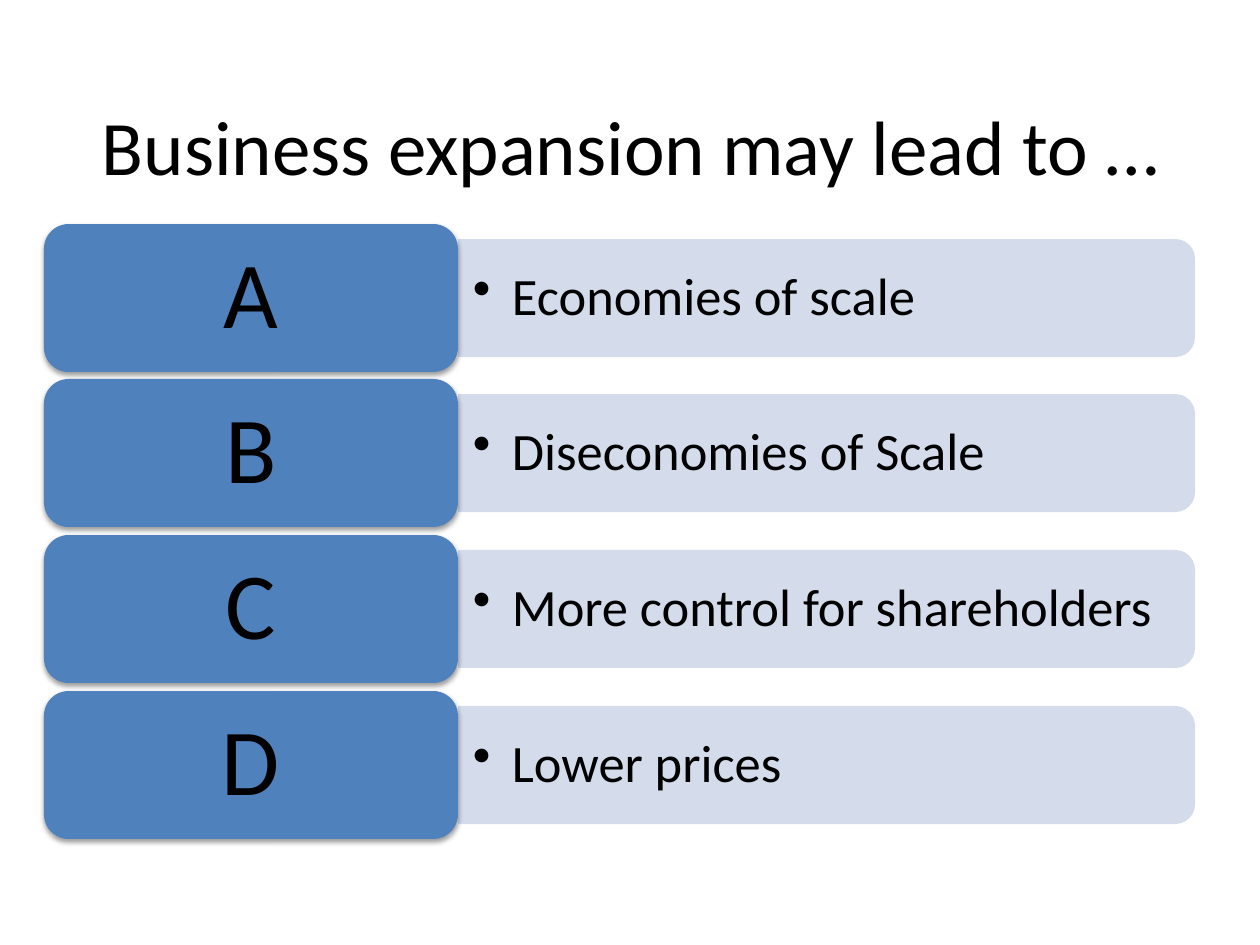
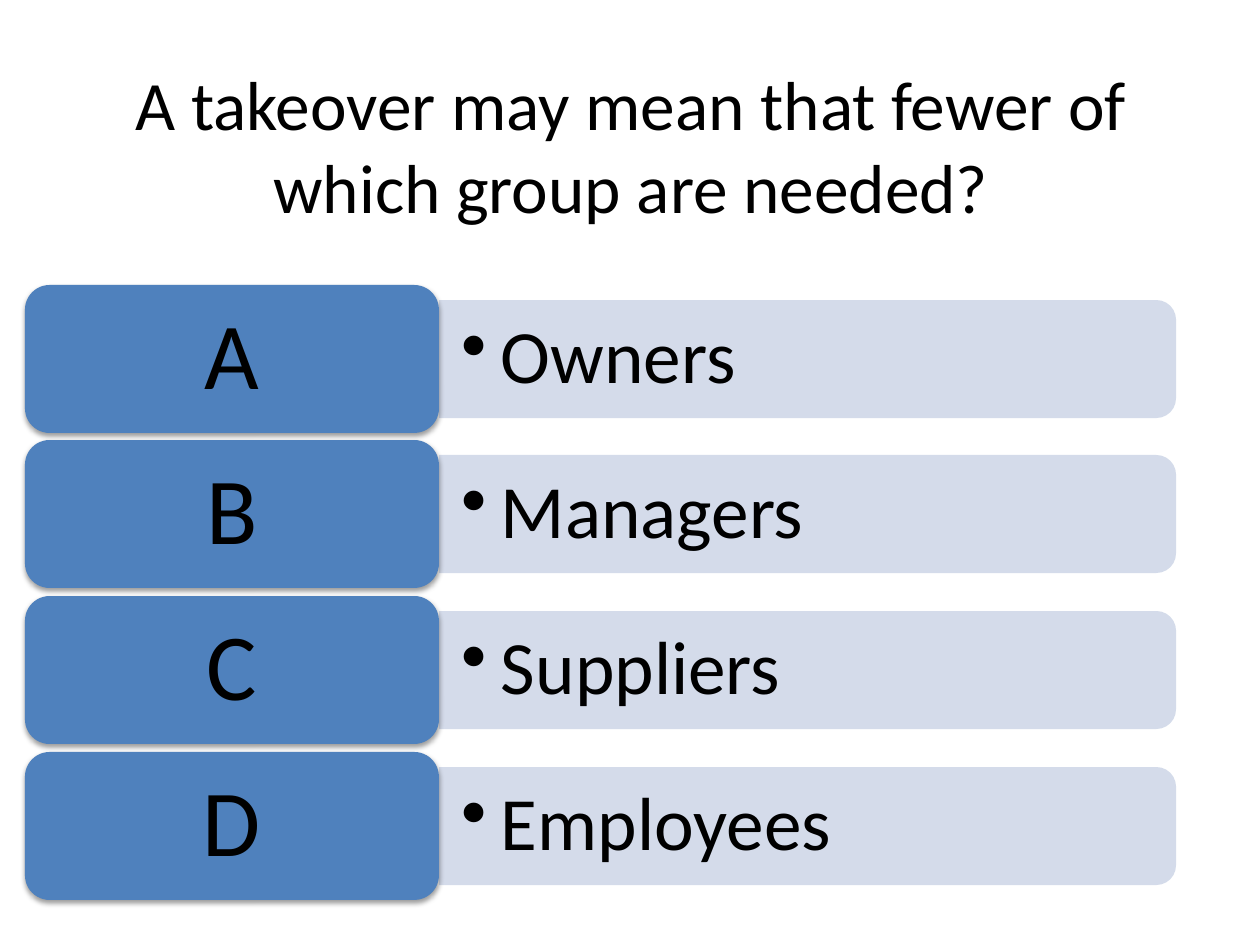
"""Build two multiple-choice slides about business growth."""
from lxml import etree
from pptx import Presentation
from pptx.dml.color import RGBColor
from pptx.enum.shapes import MSO_SHAPE
from pptx.enum.text import MSO_ANCHOR, PP_ALIGN
from pptx.oxml.ns import qn
from pptx.util import Pt

PX = 914400 / 126
MIDDLE = MSO_ANCHOR.MIDDLE
CENTER, LEFT = PP_ALIGN.CENTER, PP_ALIGN.LEFT
TILE, BAR = MSO_SHAPE.ROUNDED_RECTANGLE, MSO_SHAPE.ROUND_2_SAME_RECTANGLE
BLACK, BLUE, PALE = "000000", "4F81BD", "D0D8E8"
FONT = "Calibri"
TILE_W, TILE_H = 414, 148
BAR_W, BAR_H = 737, 118
INDENT = 39

QUESTIONS = [
    dict(title="Business expansion may lead to …", title_size=44, left=44, top=224,
         size=30, inset=(15, 7),
         answers=["Economies of scale", "Diseconomies of Scale",
                  "More control for shareholders", "Lower prices"]),
    dict(title="A takeover may mean that fewer of which group are needed?",
         title_size=39.6, left=25, top=285, size=43, inset=(23, 11),
         answers=["Owners", "Managers", "Suppliers", "Employees"]),
]


def add_shape(s, kind, box, color):
    sp = s.shapes.add_shape(kind, *[round(v * PX) for v in box])
    sp.shadow.inherit = False
    sp.fill.solid()
    sp.fill.fore_color.rgb = RGBColor.from_string(color)
    sp.line.fill.background()
    return sp


def add_text(s, box, text, size, inset, align, after=None):
    tf = s.shapes.add_textbox(*[round(v * PX) for v in box]).text_frame
    tf.word_wrap = True
    tf.vertical_anchor = MIDDLE
    tf.margin_left = tf.margin_right = round(inset[0] * PX)
    tf.margin_top = tf.margin_bottom = round(inset[1] * PX)
    p = tf.paragraphs[0]
    p.text = text
    p.alignment = align
    font = p.runs[0].font
    font.name, font.size = FONT, Pt(size)
    font.color.rgb = RGBColor.from_string(BLACK)
    if after:
        p.line_spacing = 0.9
        space = etree.SubElement(p._p.get_or_add_pPr(), qn("a:spcAft"))
        etree.SubElement(space, qn("a:spcPct"), val=str(after * 1000))
    return p


prs = Presentation()
prs.slide_width, prs.slide_height = round(1260 * PX), round(945 * PX)

for q in QUESTIONS:
    s = prs.slides.add_slide(prs.slide_layouts[6])
    add_text(s, (64, 66, 1134, 157), q["title"], q["title_size"], (13, 6), CENTER)
    x = q["left"]
    bar_x = x + TILE_W
    for i, (letter, answer) in enumerate(zip("ABCD", q["answers"])):
        y = q["top"] + i * 467 // 3
        turn = (BAR_W - BAR_H) / 2
        bar = add_shape(s, BAR, (bar_x + turn, y + 15 - turn, BAR_H, BAR_W), PALE)
        bar.rotation = 90
        clr = bar._element.spPr.find(".//" + qn("a:srgbClr"))
        etree.SubElement(clr, qn("a:alpha"), val="90000")

        p = add_text(s, (bar_x, y + 21, 731, 107), answer, q["size"], q["inset"], LEFT, 15)
        pPr = p._p.get_or_add_pPr()
        pPr.set("marL", str(round(INDENT * PX)))
        pPr.set("indent", str(round(-INDENT * PX)))
        etree.SubElement(pPr, qn("a:buChar"), char="•")

        tile = add_shape(s, TILE, (x, y, TILE_W, TILE_H), BLUE)
        effects = tile._element.spPr.find(qn("a:effectLst"))
        shadow = etree.SubElement(effects, qn("a:outerShdw"), blurRad="40000",
                                  dist="20000", dir="5400000", rotWithShape="0")
        clr = etree.SubElement(shadow, qn("a:srgbClr"), val=BLACK)
        etree.SubElement(clr, qn("a:alpha"), val="38000")
        add_text(s, (x + 7, y + 7, TILE_W - 14, TILE_H - 14), letter, 54, (29, 14), CENTER, 35)

prs.save("out.pptx")
